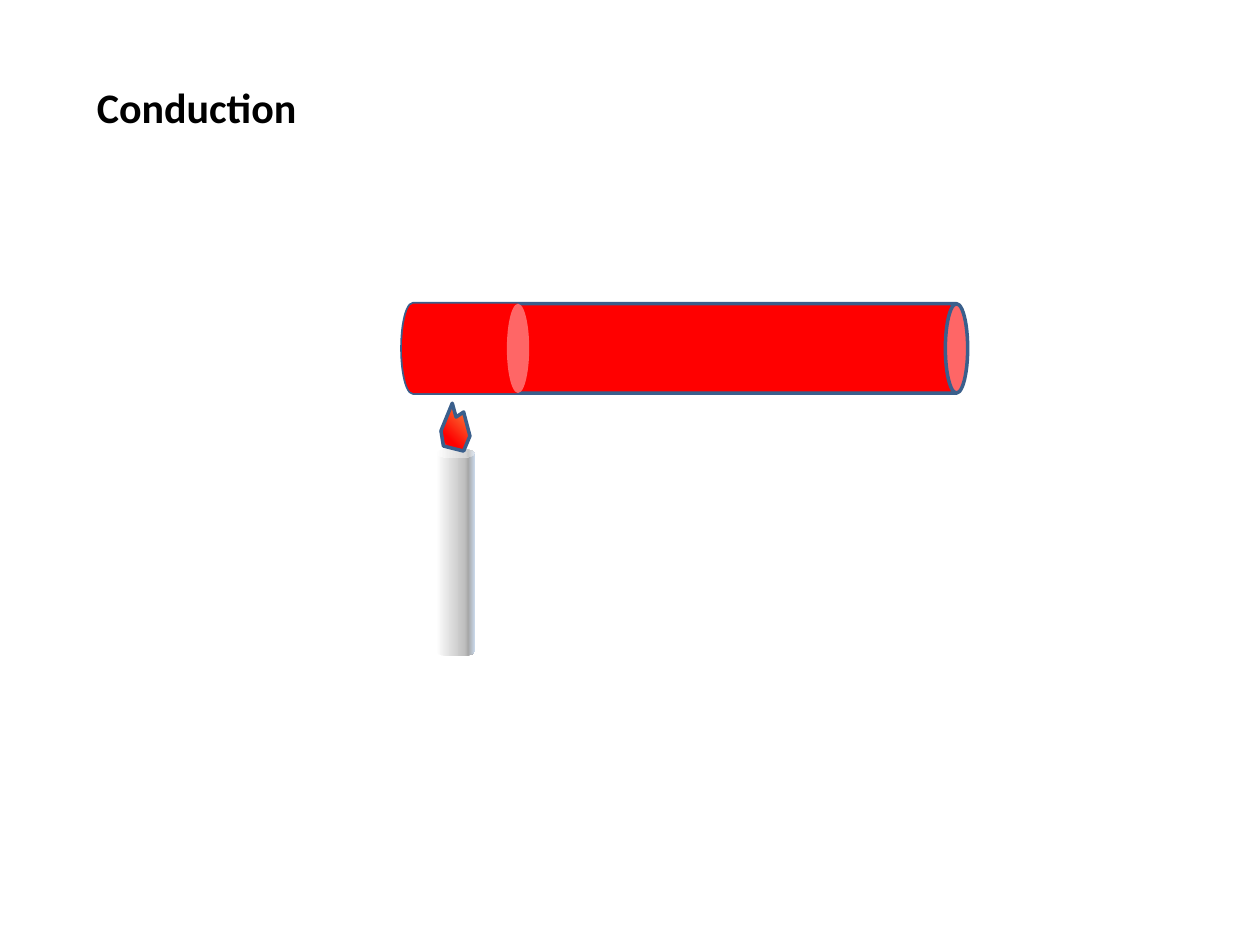
from lxml.etree import SubElement
from pptx import Presentation
from pptx.dml.color import RGBColor
from pptx.enum.shapes import MSO_SHAPE
from pptx.enum.text import MSO_AUTO_SIZE
from pptx.oxml.ns import qn
from pptx.util import Inches, Pt

BLACK = RGBColor(0x00, 0x00, 0x00)
WHITE = RGBColor(0xFF, 0xFF, 0xFF)
RED = RGBColor(0xFF, 0x00, 0x00)
ORANGE = RGBColor(0xF7, 0x96, 0x46)
SILVER = RGBColor(0xBF, 0xBF, 0xBF)
GREY = RGBColor(0xA6, 0xA6, 0xA6)
PALE = RGBColor(0xCA, 0xD9, 0xEB)
EDGE = RGBColor(0x3A, 0x5F, 0x8C)

STOPS = (0, 74, 83, 100)
WAX = (WHITE, SILVER, GREY, PALE)
FIRE = (ORANGE, RED, RED, PALE)
FLAME = [(3.52, 3.54), (3.68, 3.58), (3.73, 3.46), (3.68, 3.27),
         (3.62, 3.31), (3.59, 3.2), (3.5, 3.42)]


class Board:
    font = "Calibri"
    size = Pt(24)
    edge = Pt(2)

    def __init__(self, slide):
        self.slide = slide
        back = slide.background.fill
        back.solid()
        back.fore_color.rgb = WHITE

    def title(self, text, x, y, w, h):
        box = self.slide.shapes.add_textbox(Inches(x), Inches(y), Inches(w), Inches(h))
        frame = box.text_frame
        frame.word_wrap = True
        frame.auto_size = MSO_AUTO_SIZE.SHAPE_TO_FIT_TEXT
        run = frame.paragraphs[0].add_run()
        run.text = text
        run.font.name = self.font
        run.font.size = self.size
        run.font.bold = True
        run.font.color.rgb = BLACK

    def paint(self, shape, fill, angle, line):
        shape.shadow.inherit = False
        if isinstance(fill, RGBColor):
            shape.fill.solid()
            shape.fill.fore_color.rgb = fill
        else:
            self.blend(shape, fill, angle)
        if line:
            shape.line.color.rgb = EDGE
            shape.line.width = self.edge
        else:
            shape.line.fill.background()

    def blend(self, shape, tones, angle):
        shape.fill.gradient()
        shape.fill.gradient_angle = angle
        stops = shape._element.spPr.find(qn("a:gradFill")).find(qn("a:gsLst"))
        for old in list(stops):
            stops.remove(old)
        for place, tone in zip(STOPS, tones):
            stop = SubElement(stops, qn("a:gs"), pos=str(place * 1000))
            SubElement(stop, qn("a:srgbClr"), val=str(tone))

    def can(self, x, y, w, h, fill, turn=0, line=False):
        shape = self.slide.shapes.add_shape(
            MSO_SHAPE.CAN, Inches(x), Inches(y), Inches(w), Inches(h))
        shape.rotation = turn
        self.paint(shape, fill, 0, line)

    def outline(self, points, fill, angle):
        first, *rest = [(Inches(x), Inches(y)) for x, y in points]
        pen = self.slide.shapes.build_freeform(*first)
        pen.add_line_segments(rest, close=True)
        self.paint(pen.convert_to_shape(), fill, angle, True)


def main():
    deck = Presentation()
    deck.slide_width = Inches(10)
    deck.slide_height = Inches(7.5)
    board = Board(deck.slides.add_slide(deck.slide_layouts[6]))
    board.title("Conduction", 0.67, 0.6, 4.41, 0.5)
    board.can(3.46, 3.56, 0.31, 1.65, WAX)
    board.outline(FLAME, FIRE, 225)
    board.can(5.08, 0.52, 0.71, 4.49, RED, turn=90, line=True)
    board.can(3.34, 2.26, 0.71, 1.01, RED, turn=90)
    deck.save("out.pptx")


if __name__ == "__main__":
    main()
